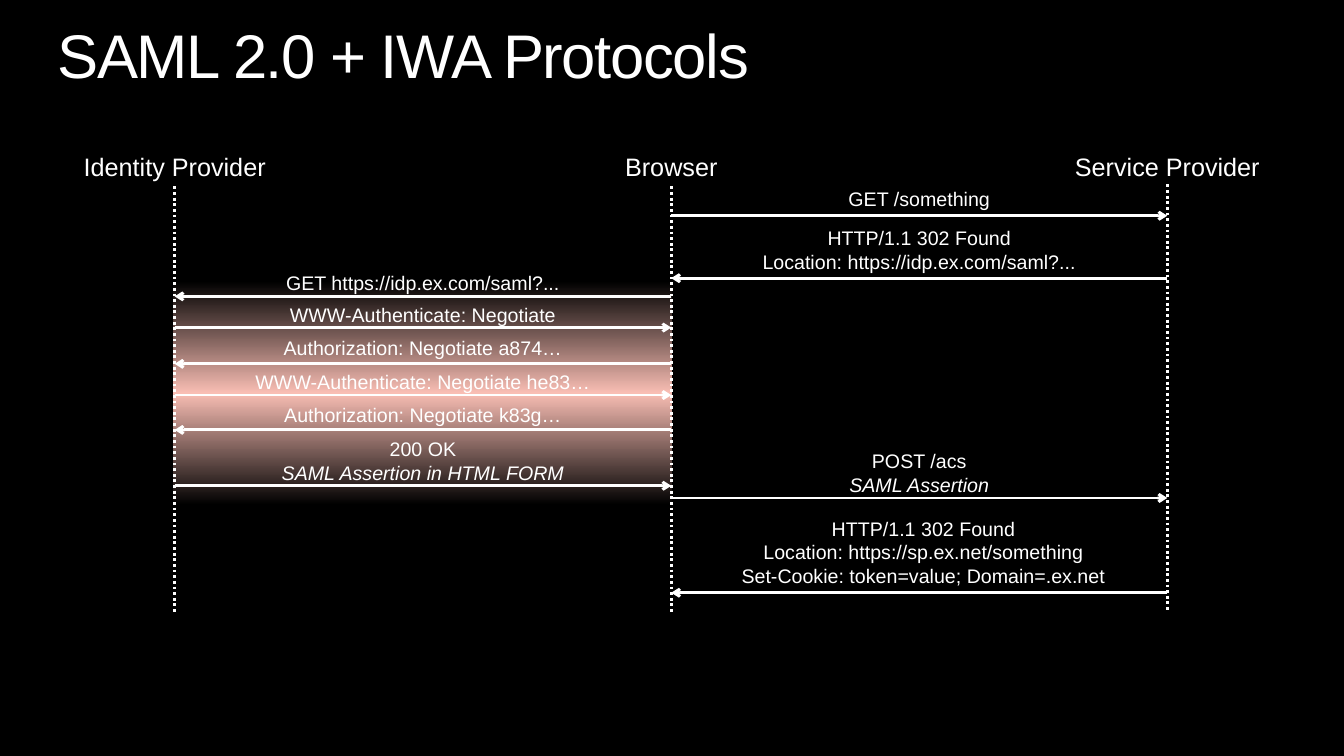
from dataclasses import dataclass

from lxml import etree
from pptx import Presentation
from pptx.dml.color import RGBColor
from pptx.enum import dml, shapes, text
from pptx.oxml import ns
from pptx.util import Pt


@dataclass(frozen=True)
class Theme:
    font: str = "Arial"
    ink: RGBColor = RGBColor(0xFF, 0xFF, 0xFF)
    ground: RGBColor = RGBColor(0, 0, 0)
    glow: RGBColor = RGBColor(0xF9, 0xBE, 0xB4)
    title: float = 44
    lane: float = 18
    message: float = 14
    line: float = 2


@dataclass(frozen=True)
class Lane:
    name: str
    x: float
    top: float = 133.2


@dataclass(frozen=True)
class Line:
    text: str
    italic: bool = False


@dataclass(frozen=True)
class Message:
    src: Lane
    dst: Lane
    y: float
    label_top: float
    lines: tuple[Line, ...]
    label_shift: float = 0


T = Theme()
LANE_LENGTH = 304.5
IDP = Lane("Identity Provider", 124.8)
BROWSER = Lane("Browser", 479.5)
SP = Lane("Service Provider", 833.8, 131.8)

MESSAGES = (
    Message(BROWSER, SP, 154.1, 129.6, (Line("GET /something"),)),
    Message(SP, BROWSER, 198.7, 157.7,
            (Line("HTTP/1.1 302 Found"), Line("Location: https://idp.ex.com/saml?..."))),
    Message(BROWSER, IDP, 211.7, 189.4, (Line("GET https://idp.ex.com/saml?..."),)),
    Message(IDP, BROWSER, 234, 212.4, (Line("WWW-Authenticate: Negotiate"),)),
    Message(BROWSER, IDP, 259.9, 236.2, (Line("Authorization: Negotiate a874…"),)),
    Message(IDP, BROWSER, 282.2, 260.6, (Line("WWW-Authenticate: Negotiate he83…"),)),
    Message(BROWSER, IDP, 307.1, 283.7, (Line("Authorization: Negotiate k83g…"),)),
    Message(IDP, BROWSER, 347, 308.2,
            (Line("200 OK"), Line("SAML Assertion in HTML FORM", True))),
    Message(BROWSER, SP, 355.7, 316.8,
            (Line("POST /acs"), Line("SAML Assertion", True))),
    Message(SP, BROWSER, 423.4, 365,
            (Line("HTTP/1.1 302 Found"), Line("Location: https://sp.ex.net/something"),
             Line("Set-Cookie: token=value; Domain=.ex.net")), 3),
)


def add_glow(s, top: float, angle: float) -> None:
    sp = s.shapes.add_shape(shapes.MSO_SHAPE.RECTANGLE, Pt(123.5), Pt(top), Pt(356.5), Pt(79.9))
    sp.shadow.inherit = False
    sp.line.fill.background()
    sp.fill.gradient()
    sp.fill.gradient_angle = angle
    for stop, colour in zip(sp.fill.gradient_stops, (T.glow, T.ground)):
        stop.color.rgb = colour


def add_line(s, x1: float, y1: float, x2: float, y2: float, arrow: bool = False) -> None:
    c = s.shapes.add_connector(shapes.MSO_CONNECTOR.STRAIGHT, Pt(x1), Pt(y1), Pt(x2), Pt(y2))
    c.line.color.rgb = T.ink
    c.line.width = Pt(T.line)
    if arrow:
        etree.SubElement(c.line._get_or_add_ln(), ns.qn("a:tailEnd"), type="arrow")
    else:
        c.line.dash_style = dml.MSO_LINE.ROUND_DOT
    etree.SubElement(c._element.spPr, ns.qn("a:effectLst"))


def add_run(p, content: Line, size: float):
    r = p.add_run()
    r.text = content.text
    r.font.name = T.font
    r.font.size = Pt(size)
    r.font.color.rgb = T.ink
    if content.italic:
        r.font.italic = True
    return r


def add_label(s, centre: float, top: float, width: float, height: float,
              lines: tuple[Line, ...], size: float) -> None:
    sp = s.shapes.add_textbox(Pt(centre - width / 2), Pt(top), Pt(width), Pt(height))
    tf = sp.text_frame
    tf.word_wrap = True
    tf.vertical_anchor = text.MSO_ANCHOR.MIDDLE
    for i, content in enumerate(lines):
        p = tf.add_paragraph() if i else tf.paragraphs[0]
        p.alignment = text.PP_ALIGN.CENTER
        add_run(p, content, size)


def add_title(s, content: str) -> None:
    tf = s.shapes.add_textbox(Pt(41), Pt(18), Pt(877.7), Pt(48.2)).text_frame
    tf.word_wrap = True
    tf.margin_left = tf.margin_top = tf.margin_right = tf.margin_bottom = 0
    p = tf.paragraphs[0]
    p.line_spacing = 0.9
    r = add_run(p, Line(content), T.title)
    r.font._element.set("spc", "-100")


def add_message(s, m: Message) -> None:
    add_line(s, m.src.x, m.y, m.dst.x, m.y, arrow=True)
    add_label(s, (m.src.x + m.dst.x) / 2 + m.label_shift, m.label_top, 354.5,
              7.5 + 16.9 * len(m.lines), m.lines, T.message)


def main() -> None:
    prs = Presentation()
    prs.slide_width, prs.slide_height = Pt(960), Pt(540)
    s = prs.slides.add_slide(prs.slide_layouts[6])
    s.background.fill.solid()
    s.background.fill.fore_color.rgb = T.ground

    # Glow behind the IWA handshake, brightest in the middle
    add_glow(s, 280.8, 270)
    add_glow(s, 200.9, 90)

    add_title(s, "SAML 2.0 + IWA Protocols")

    # Lifelines and their names
    for lane in (IDP, BROWSER, SP):
        add_line(s, lane.x, lane.top, lane.x, lane.top + LANE_LENGTH)
        add_label(s, lane.x, 104.4, 190, 29, (Line(lane.name),), T.lane)

    # Protocol messages in order
    for m in MESSAGES:
        add_message(s, m)

    prs.save("out.pptx")


if __name__ == "__main__":
    main()
